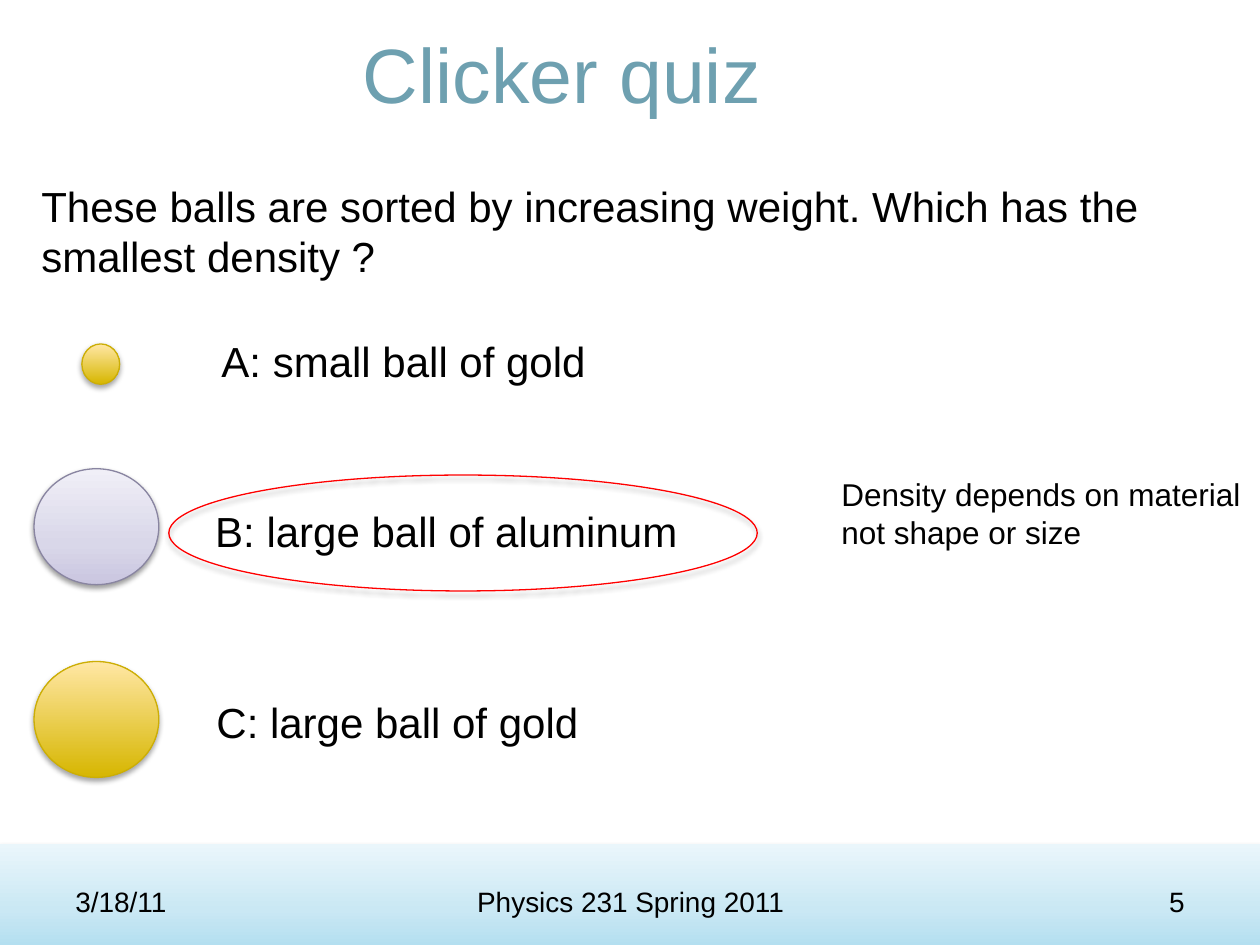
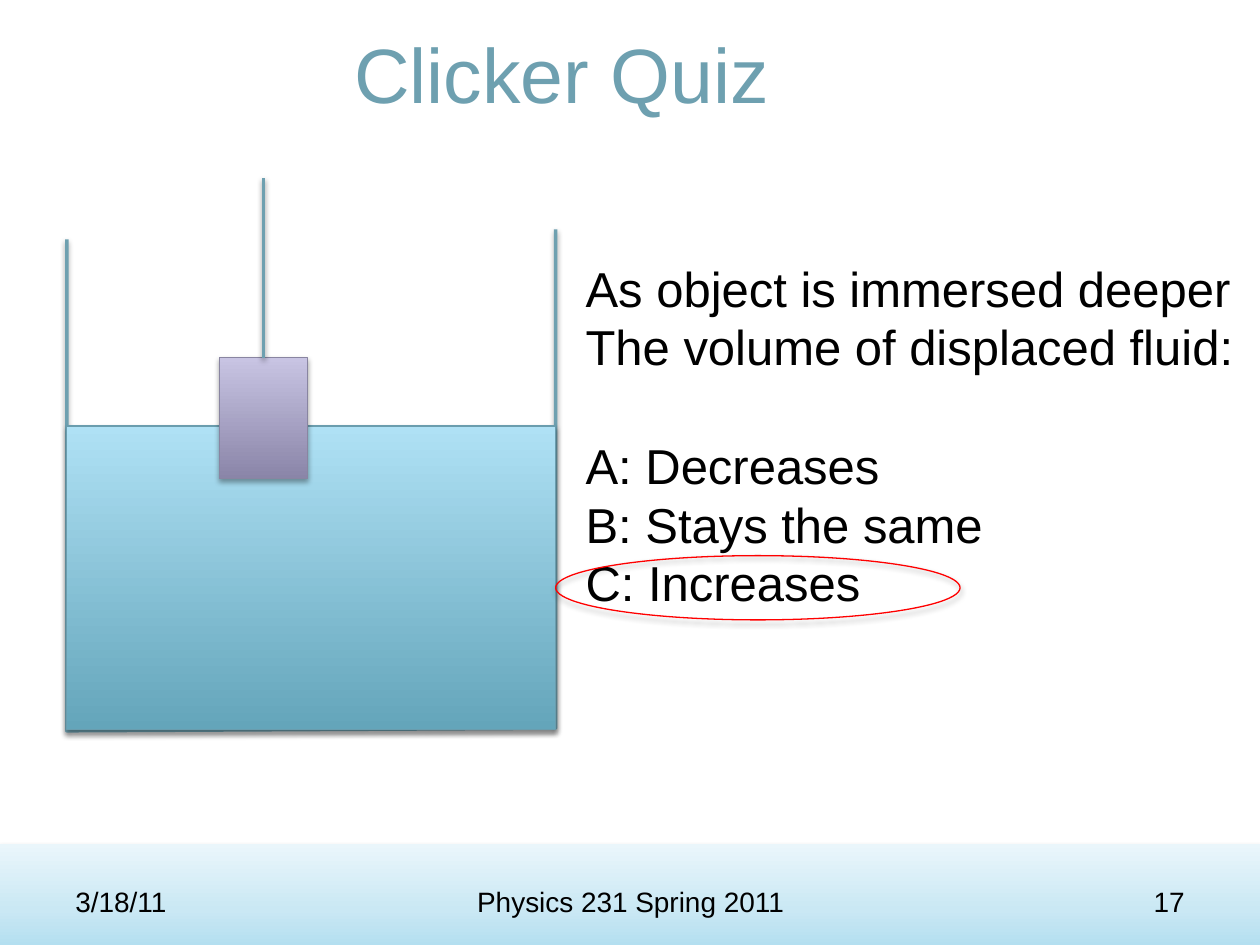
"""Build two clicker quiz slides on density and displaced fluid."""
import lxml.etree
import pptx
import pptx.dml.color
import pptx.enum.shapes
import pptx.enum.text
import pptx.oxml.ns
import pptx.util

PX = 9144
FONT = "Arial"
BLACK, RED, TEAL = "000000", "FF0000", "6EA0B0"
GOLD, GOLD_EDGE = [(0, "D6B600"), (100, "FFE7A5")], "CCAE05"
SILVER, GRAY_EDGE = [(0, "CAC6E0"), (35, "D9D7E9"), (100, "F0EFF7")], "8985A1"
BLOCK = [(0, "8A85A8"), (100, "C8C4E3")]
WATER, WATER_EDGE = [(0, "64A5BA"), (100, "AFE1F5")], "6A9DAE"
BAND = [(0, "B4DFF0"), (35, "CAE8F4"), (100, "EAF6FB")]
SOFT, DEEP = (38, 1.6), (35, 1.8)

color = pptx.dml.color.RGBColor.from_string
qn = pptx.oxml.ns.qn
Pt = pptx.util.Pt
Align = pptx.enum.text.PP_ALIGN
Shape = pptx.enum.shapes.MSO_SHAPE


def write(page, text, spot, size=24, ink=BLACK, align=Align.LEFT, fixed=False):
    box = page.shapes.add_textbox(*[n * PX for n in spot])
    frame = box.text_frame
    frame.word_wrap = fixed
    if fixed:
        frame.vertical_anchor = pptx.enum.text.MSO_ANCHOR.MIDDLE
    else:
        frame.auto_size = pptx.enum.text.MSO_AUTO_SIZE.SHAPE_TO_FIT_TEXT
    for index, line in enumerate(text.split("\n")):
        para = frame.add_paragraph() if index else frame.paragraphs[0]
        para.alignment = align
        span = para.add_run()
        span.text = line
        span.font.name = FONT
        span.font.size = Pt(size)
        span.font.color.rgb = color(ink)
    return box


def finish(shape, stops=None, edge=None, weight=0.75, shadow=DEEP):
    if stops:
        shape.fill.gradient()
        shape.fill.gradient_angle = 90
        stop_list = shape.element.spPr.find(".//" + qn("a:gsLst"))
        for stop in list(stop_list):
            stop_list.remove(stop)
        for position, tint in stops:
            stop = lxml.etree.SubElement(stop_list, qn("a:gs"), pos=str(position * 1000))
            lxml.etree.SubElement(stop, qn("a:srgbClr"), val=tint)
    elif hasattr(shape, "fill"):
        shape.fill.background()
    if edge:
        shape.line.color.rgb = color(edge)
        shape.line.width = Pt(weight)
    else:
        shape.line.fill.background()
    opacity, distance = shadow
    effects = lxml.etree.SubElement(shape.element.spPr, qn("a:effectLst"))
    outer = lxml.etree.SubElement(
        effects, qn("a:outerShdw"), blurRad=str(Pt(3.1)), dist=str(Pt(distance)),
        dir="5400000", rotWithShape="0")
    shade = lxml.etree.SubElement(outer, qn("a:srgbClr"), val=BLACK)
    lxml.etree.SubElement(shade, qn("a:alpha"), val=str(opacity * 1000))


deck = pptx.Presentation()
deck.slide_width, deck.slide_height = 1000 * PX, 750 * PX

pages = []
for title, number in (("Clicker quiz", "5"), ("Clicker Quiz", "17")):
    page = deck.slides.add_slide(deck.slide_layouts[6])
    band = page.shapes.add_shape(Shape.RECTANGLE, 0, 670 * PX, 1000 * PX, 80 * PX)
    finish(band, BAND, shadow=SOFT)
    write(page, title, (23, 13, 846, 89), size=44, ink=TEAL, align=Align.CENTER, fixed=True)
    for text, left, width, align in (
            ("3/18/11", 50, 233, Align.LEFT),
            ("Physics 231 Spring 2011", 342, 317, Align.CENTER),
            (number, 717, 233, Align.RIGHT)):
        write(page, text, (left, 695, width, 40), size=16, align=align, fixed=True)
    pages.append(page)
density, immersion = pages

write(density, "These balls are sorted by increasing weight. Which has the\nsmallest density ?",
      (23, 138, 900, 91))
for ball_spot, stops, edge, answer, answer_spot in (
        ((65, 273, 30, 32), GOLD, GOLD_EDGE, "A: small ball of gold", (166, 261, 313, 50)),
        ((27, 372, 99, 92), SILVER, GRAY_EDGE, "B: large ball of aluminum", (161, 396, 391, 50)),
        ((27, 525, 99, 92), GOLD, GOLD_EDGE, "C: large ball of gold", (162, 548, 310, 50))):
    ball = density.shapes.add_shape(Shape.OVAL, *[n * PX for n in ball_spot])
    finish(ball, stops, edge, shadow=SOFT if stops is SILVER else DEEP)
    write(density, answer, answer_spot)
write(density, "Density depends on material\nnot shape or size", (658, 372, 340, 71), size=18)

outline = immersion.shapes.build_freeform(53 * PX, 190 * PX)
outline.add_line_segments(
    [(x * PX, y * PX) for x, y in ((53, 580), (441, 578), (441, 182))], close=False)
finish(outline.convert_to_shape(), edge=TEAL, weight=2, shadow=SOFT)
for spot, stops, edge in (
        ((53, 338, 388, 241), WATER, WATER_EDGE),
        ((174, 284, 70, 96), BLOCK, GRAY_EDGE)):
    body = immersion.shapes.add_shape(Shape.RECTANGLE, *[n * PX for n in spot])
    finish(body, stops, edge)
string = immersion.shapes.add_connector(
    pptx.enum.shapes.MSO_CONNECTOR.STRAIGHT, 209 * PX, 284 * PX, 209 * PX, 141 * PX)
finish(string, edge=TEAL, weight=2, shadow=SOFT)
question = write(
    immersion,
    "As object is immersed deeper\nThe volume of displaced fluid:\n"
    "A: Decreases\nB: Stays the same\nC: Increases",
    (455, 200, 540, 293), size=28)
question.text_frame.paragraphs[2].space_before = Pt(34)

for page, spot in ((density, (134, 377, 467, 92)), (immersion, (441, 441, 321, 51))):
    ring = page.shapes.add_shape(Shape.OVAL, *[n * PX for n in spot])
    finish(ring, edge=RED)

deck.save("out.pptx")
